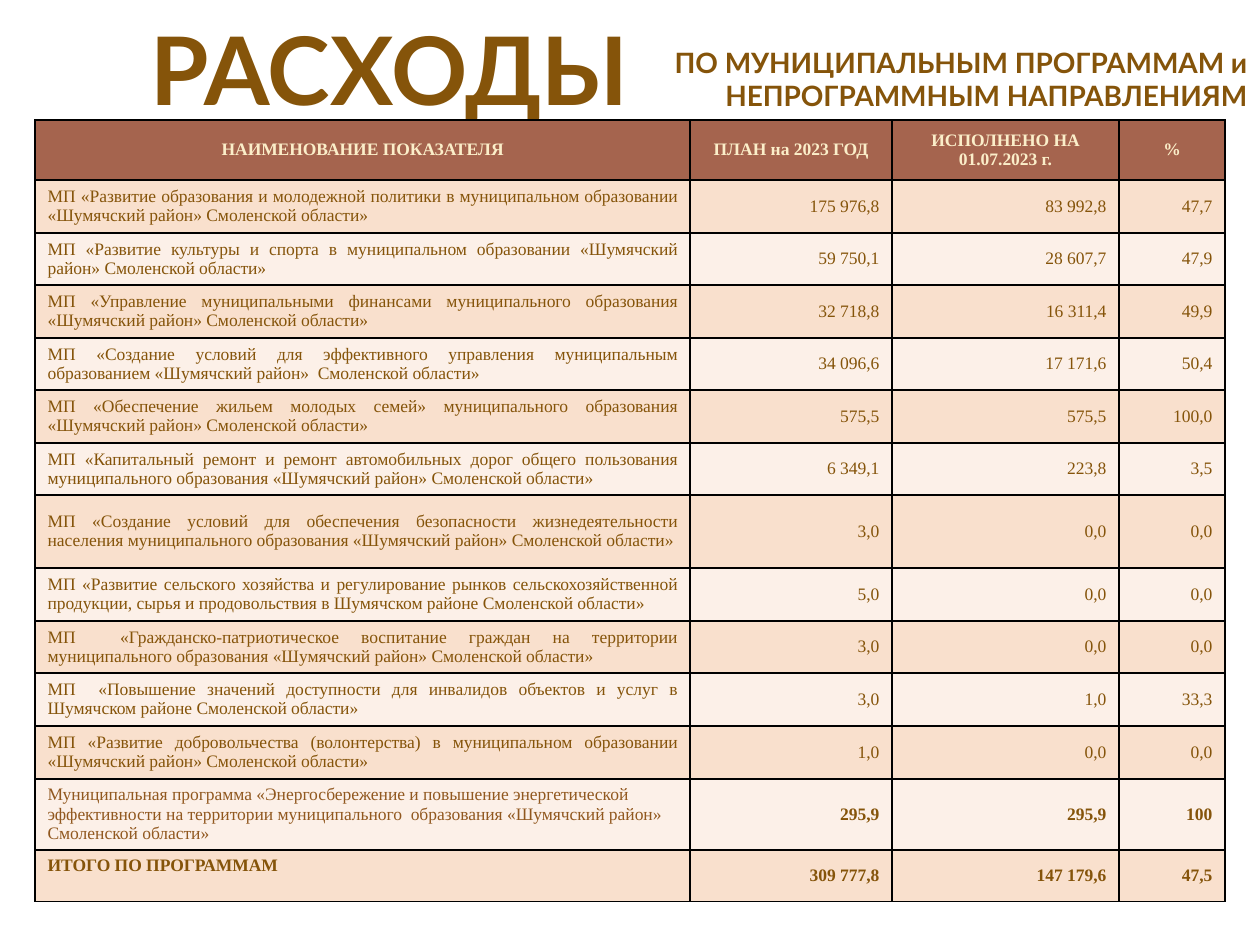
from dataclasses import dataclass

from lxml import etree
from pptx import Presentation
from pptx.dml.color import RGBColor
from pptx.enum.text import MSO_ANCHOR, MSO_AUTO_SIZE, PP_ALIGN
from pptx.oxml.ns import qn
from pptx.util import Emu, Pt

LEFT, CENTER, RIGHT, JUSTIFY = (
    PP_ALIGN.LEFT, PP_ALIGN.CENTER, PP_ALIGN.RIGHT, PP_ALIGN.JUSTIFY)
TOP, MIDDLE = MSO_ANCHOR.TOP, MSO_ANCHOR.MIDDLE
NO_AUTOFIT = MSO_AUTO_SIZE.NONE
TITLE_ONLY = 5
PX_PER_INCH = 126


@dataclass(frozen=True)
class Theme:
    heading_font: str = "Lato"
    table_font: str = "Times New Roman"
    title_size: int = 54
    subtitle_size: int = 16
    table_size: int = 10
    border_width: int = 1
    brown: str = "85540A"
    light_brown: str = "91581F"
    cream: str = "FBEEC9"
    header_fill: str = "A5644E"
    band_fills: tuple = ("F9E0CD", "FCF0E8")
    border: str = "000000"


THEME = Theme()

COLUMN_WIDTHS = (655, 202, 227, 106)
HEADER_HEIGHT = 60
ROW_HEIGHTS = (53, 52, 53, 52, 53, 52, 73, 53, 52, 53, 53, 71, 52)

HEADERS = ("НАИМЕНОВАНИЕ ПОКАЗАТЕЛЯ", "ПЛАН на 2023 ГОД",
           "ИСПОЛНЕНО НА 01.07.2023 г.", "%")
PROGRAMS = (
    ("МП «Развитие образования и молодежной политики в муниципальном образовании "
     "«Шумячский район» Смоленской области»", "175 976,8", "83 992,8", "47,7"),
    ("МП «Развитие культуры и спорта в муниципальном образовании "
     "«Шумячский район» Смоленской области»", "59 750,1", "28 607,7", "47,9"),
    ("МП «Управление муниципальными финансами муниципального образования "
     "«Шумячский район» Смоленской области»", "32 718,8", "16 311,4", "49,9"),
    ("МП «Создание условий для эффективного управления муниципальным образованием "
     "«Шумячский район»  Смоленской области»", "34 096,6", "17 171,6", "50,4"),
    ("МП «Обеспечение жильем молодых семей» муниципального образования "
     "«Шумячский район» Смоленской области»", "575,5", "575,5", "100,0"),
    ("МП «Капитальный ремонт и ремонт автомобильных дорог общего пользования "
     "муниципального образования «Шумячский район» Смоленской области»",
     "6 349,1", "223,8", "3,5"),
    ("МП «Создание условий для обеспечения безопасности жизнедеятельности населения "
     "муниципального образования «Шумячский район» Смоленской области»",
     "3,0", "0,0", "0,0"),
    ("МП «Развитие сельского хозяйства и регулирование рынков сельскохозяйственной "
     "продукции, сырья и продовольствия в Шумячском районе Смоленской области»",
     "5,0", "0,0", "0,0"),
    ("МП  «Гражданско-патриотическое воспитание граждан на территории "
     "муниципального образования «Шумячский район» Смоленской области»",
     "3,0", "0,0", "0,0"),
    ("МП  «Повышение значений доступности для инвалидов объектов и услуг "
     "в Шумячском районе Смоленской области»", "3,0", "1,0", "33,3"),
    ("МП «Развитие добровольчества (волонтерства) в муниципальном образовании "
     "«Шумячский район» Смоленской области»", "1,0", "0,0", "0,0"),
)
ENERGY_PROGRAM = (
    "Муниципальная программа «Энергосбережение и повышение энергетической "
    "эффективности на территории муниципального  образования «Шумячский район» "
    "Смоленской области»", "295,9", "295,9", "100")
TOTAL = ("ИТОГО ПО ПРОГРАММАМ", "309 777,8", "147 179,6", "47,5")


def px(length):
    return Emu(round(length * 914400 / PX_PER_INCH))


def write_text(text_frame, text, font_name, size, color, bold, alignment):
    text_frame.text = text
    paragraph = text_frame.paragraphs[0]
    paragraph.alignment = alignment
    font = paragraph.runs[0].font
    font.name = font_name
    font.size = Pt(size)
    font.bold = bold
    font.color.rgb = RGBColor.from_string(color)


def add_title(slide, text):
    title = slide.shapes.title
    title.left, title.top, title.width, title.height = px(0), px(20), px(779), px(96)
    text_frame = title.text_frame
    text_frame.auto_size = NO_AUTOFIT
    text_frame.vertical_anchor = MIDDLE
    write_text(text_frame, text, THEME.heading_font, THEME.title_size,
               THEME.brown, True, CENTER)


def add_subtitle(slide, text):
    text_frame = slide.shapes.add_textbox(px(610), px(39), px(650), px(81)).text_frame
    text_frame.word_wrap = True
    write_text(text_frame, text, THEME.heading_font, THEME.subtitle_size,
               THEME.brown, True, RIGHT)


def add_borders(cell):
    """Draw all four sides; the lines must precede the fill in the cell properties."""
    properties = cell._tc.get_or_add_tcPr()
    for index, side in enumerate(("a:lnL", "a:lnR", "a:lnT", "a:lnB")):
        line = etree.Element(qn(side), w=str(Pt(THEME.border_width)))
        fill = etree.SubElement(line, qn("a:solidFill"))
        etree.SubElement(fill, qn("a:srgbClr"), val=THEME.border)
        properties.insert(index, line)


def fill_row(table, row, texts, fill, color, bold, alignment):
    for column, text in enumerate(texts):
        cell = table.cell(row, column)
        cell.vertical_anchor = MIDDLE
        cell.fill.solid()
        cell.fill.fore_color.rgb = RGBColor.from_string(fill)
        write_text(cell.text_frame, text, THEME.table_font, THEME.table_size,
                   color, bold, alignment)
        add_borders(cell)


def format_name(cell, color, bold, alignment):
    paragraph = cell.text_frame.paragraphs[0]
    paragraph.alignment = alignment
    font = paragraph.runs[0].font
    font.bold = bold
    font.color.rgb = RGBColor.from_string(color)


def add_expense_table(slide):
    heights = (HEADER_HEIGHT, *ROW_HEIGHTS)
    table = slide.shapes.add_table(
        len(heights), len(COLUMN_WIDTHS), px(35), px(120),
        px(sum(COLUMN_WIDTHS)), px(sum(heights))).table
    for column, width in zip(table.columns, COLUMN_WIDTHS):
        column.width = px(width)
    for row, height in zip(table.rows, heights):
        row.height = px(height)

    fill_row(table, 0, HEADERS, THEME.header_fill, THEME.cream, True, CENTER)
    for row, texts in enumerate((*PROGRAMS, ENERGY_PROGRAM, TOTAL), start=1):
        is_program = row <= len(PROGRAMS)
        fill = THEME.band_fills[(row - 1) % 2]
        fill_row(table, row, texts, fill, THEME.brown, not is_program, RIGHT)
        if is_program:
            format_name(table.cell(row, 0), THEME.brown, False, JUSTIFY)

    energy_row = len(PROGRAMS) + 1
    format_name(table.cell(energy_row, 0), THEME.light_brown, False, LEFT)
    total_name = table.cell(energy_row + 1, 0)
    format_name(total_name, THEME.brown, True, LEFT)
    total_name.vertical_anchor = TOP


def main():
    presentation = Presentation()
    presentation.slide_width, presentation.slide_height = px(1260), px(945)
    slide = presentation.slides.add_slide(presentation.slide_layouts[TITLE_ONLY])
    add_title(slide, "РАСХОДЫ")
    add_expense_table(slide)
    add_subtitle(slide, "ПО МУНИЦИПАЛЬНЫМ ПРОГРАММАМ и НЕПРОГРАММНЫМ НАПРАВЛЕНИЯМ")
    presentation.save("out.pptx")


if __name__ == "__main__":
    main()
